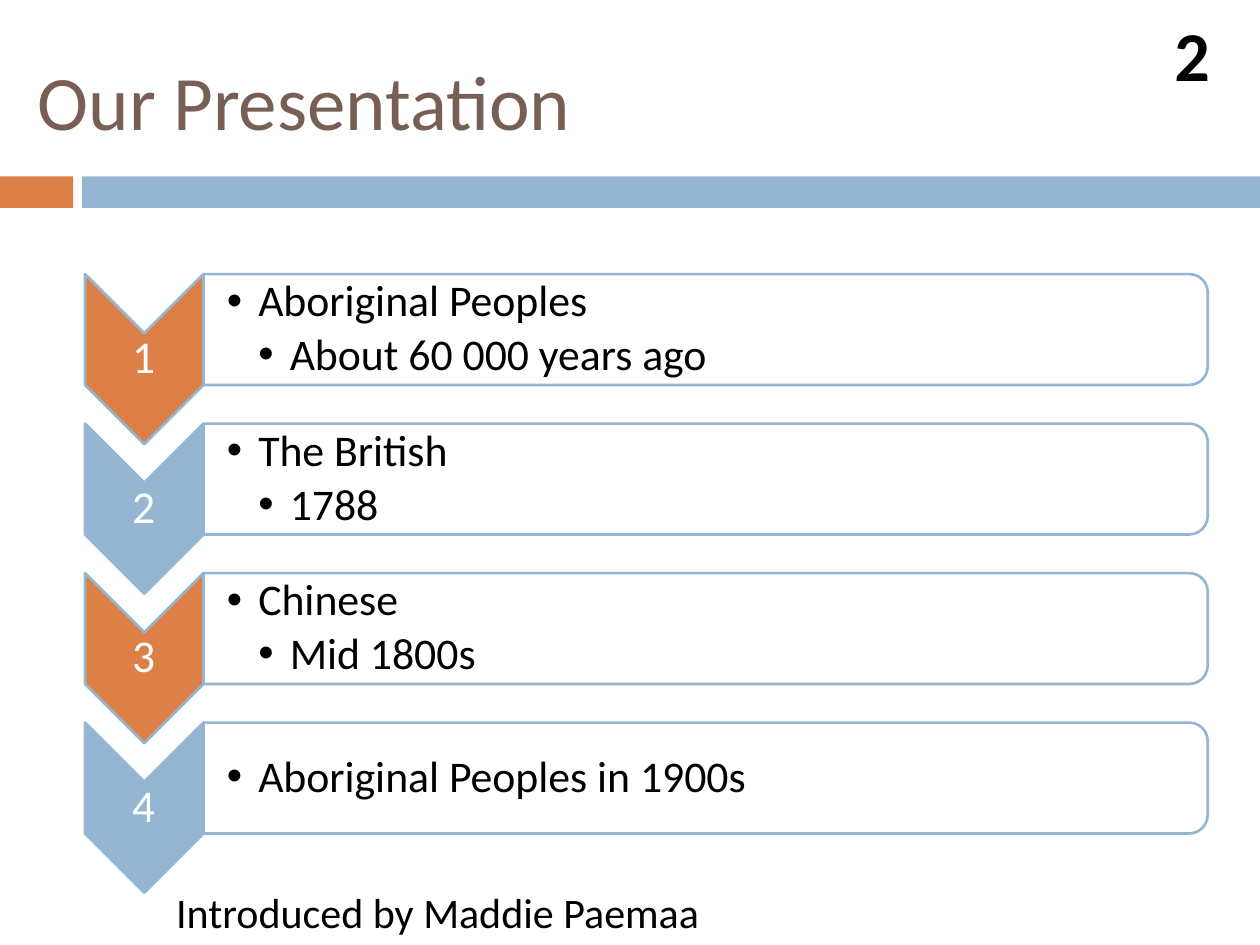
from lxml.etree import SubElement
from pptx import Presentation
from pptx.dml.color import RGBColor
from pptx.enum.shapes import MSO_SHAPE
from pptx.enum.text import MSO_ANCHOR, PP_ALIGN
from pptx.oxml.ns import qn
from pptx.util import Inches, Pt

ORANGE = RGBColor(0xDD, 0x80, 0x47)
BLUE = RGBColor(0x94, 0xB6, 0xD2)
BROWN = RGBColor(0x77, 0x5F, 0x55)
BLACK = RGBColor(0, 0, 0)
WHITE = RGBColor(255, 255, 255)

TOPICS = [
    ["Aboriginal Peoples", "About 60 000 years ago"],
    ["The British", "1788"],
    ["Chinese", "Mid 1800s"],
    ["Aboriginal Peoples in 1900s"],
]
FIRST_TOP = 2.18
PITCH = 3.56 / 3


class SlideBuilder:
    font = "Calibri"

    def __init__(self, slide):
        self.slide = slide

    def style(self, p, size, color, bold=False):
        for r in p.runs:
            r.font.name = self.font
            r.font.size = Pt(size)
            r.font.bold = bold
            r.font.color.rgb = color

    def title(self, text, x, y, w, h):
        sp = self.slide.shapes.title
        sp.left, sp.top, sp.width, sp.height = map(Inches, (x, y, w, h))
        tf = sp.text_frame
        tf.text = text
        tf.vertical_anchor = MSO_ANCHOR.MIDDLE
        tf.paragraphs[0].alignment = PP_ALIGN.LEFT
        self.style(tf.paragraphs[0], 44, BROWN)

    def shape(self, kind, x, y, w, h, fill, line=None, rotation=0):
        sp = self.slide.shapes.add_shape(kind, *map(Inches, (x, y, w, h)))
        sp.rotation = rotation
        sp.shadow.inherit = False
        sp.fill.solid()
        sp.fill.fore_color.rgb = fill
        if line is None:
            sp.line.fill.background()
        else:
            sp.line.color.rgb = line
            sp.line.width = Pt(1.5)

    def text(self, lines, x, y, w, h, size, color=BLACK, bold=False,
             align=PP_ALIGN.LEFT, anchor=MSO_ANCHOR.MIDDLE, margins=None):
        box = self.slide.shapes.add_textbox(*map(Inches, (x, y, w, h)))
        tf = box.text_frame
        tf.word_wrap = True
        tf.vertical_anchor = anchor
        if margins:
            tf.margin_left, tf.margin_right = map(Inches, margins)
            tf.margin_top = tf.margin_bottom = Inches(0.02)
        tf.text = "\n".join(lines)
        for p in tf.paragraphs:
            p.alignment = align
            self.style(p, size, color, bold)
        return tf

    def bullets(self, lines, x, y, w, h, size):
        tf = self.text(lines, x, y, w, h, size, margins=(0.19, 0.02))
        for level, p in enumerate(tf.paragraphs, 1):
            p.level = level
            p.line_spacing = 0.9
            p.space_after = Pt(0.15 * size)
            pPr = p._p.get_or_add_pPr()
            pPr.set("marL", str(Inches(0.25 * level)))
            pPr.set("indent", str(Inches(-0.25)))
            SubElement(pPr, qn("a:buFont"), typeface="Arial")
            SubElement(pPr, qn("a:buChar"), char="•")


def main():
    prs = Presentation()
    prs.slide_width, prs.slide_height = Inches(10), Inches(7.5)
    s = SlideBuilder(prs.slides.add_slide(prs.slide_layouts[5]))

    # Header: two-colour band, title and slide number
    s.shape(MSO_SHAPE.RECTANGLE, 0, 1.4, 0.58, 0.25, ORANGE)
    s.shape(MSO_SHAPE.RECTANGLE, 0.65, 1.4, 9.35, 0.25, BLUE)
    s.title("Our Presentation", 0.2, 0.25, 9.39, 1.08)
    s.text(["2"], 9.17, 0.29, 0.58, 0.27, 40, bold=True, align=PP_ALIGN.CENTER)

    # Numbered chevrons, each with its topic box (both turned by 90 degrees)
    for i, lines in enumerate(TOPICS):
        top = FIRST_TOP + i * PITCH
        s.shape(MSO_SHAPE.CHEVRON, 0.47, top + 0.2, 1.35, 0.94,
                BLUE if i % 2 else ORANGE, BLUE, 90)
        tf = s.text([str(i + 1)], 0.67, top + 0.47, 0.94, 0.4, 26, WHITE,
                    align=PP_ALIGN.CENTER, margins=(0.02, 0.02))
        tf.paragraphs[0].line_spacing = 0.9
        s.shape(MSO_SHAPE.ROUND_2_SAME_RECTANGLE, 5.16, top - 3.55, 0.88, 7.97,
                WHITE, BLUE, 90)
        s.bullets(lines, 1.61, top + 0.04, 7.93, 0.79, 25)

    # Closing line
    s.text(["Introduced by Maddie Paemaa"], 1.3, 6.99, 6.61, 0.5, 24,
           anchor=MSO_ANCHOR.TOP)

    prs.save("out.pptx")


if __name__ == "__main__":
    main()
